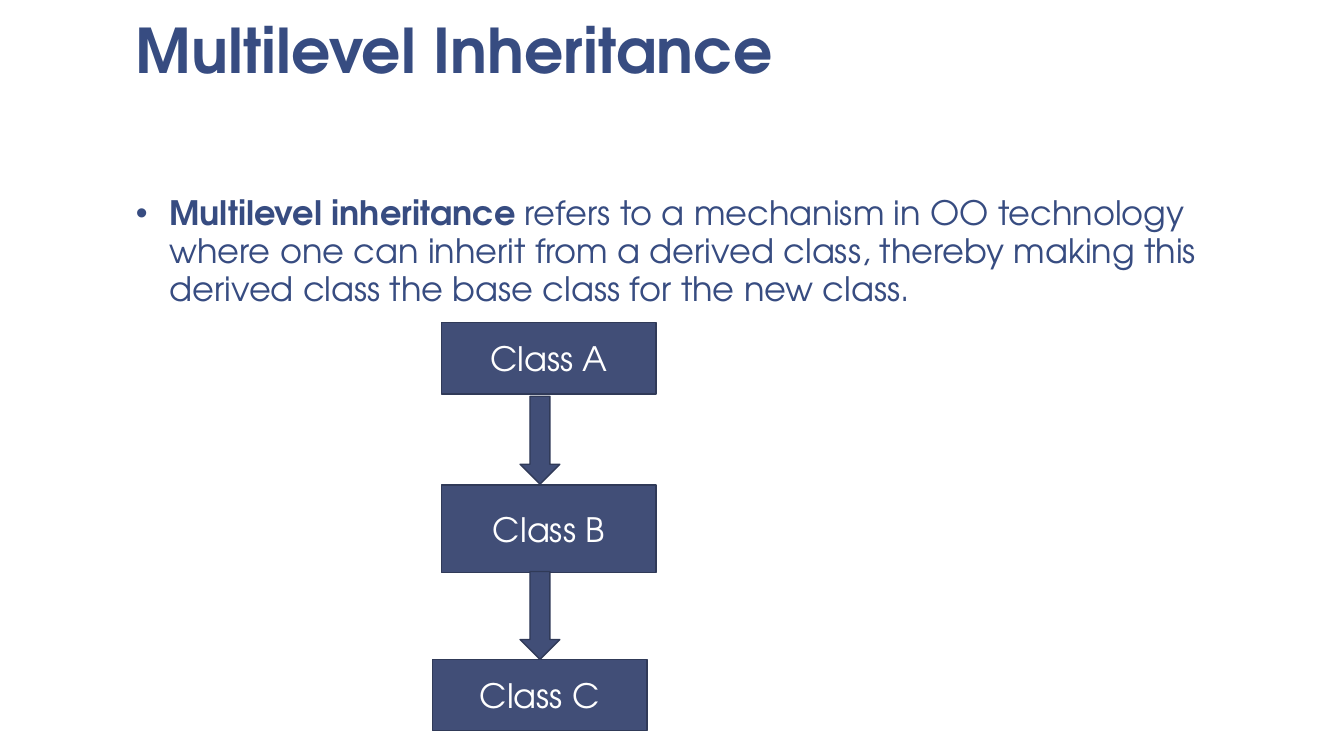
from dataclasses import dataclass

import pptx
import pptx.dml.color
import pptx.enum.shapes
import pptx.enum.text
import pptx.oxml
import pptx.oxml.ns
import pptx.util

Pt = pptx.util.Pt
RGB = pptx.dml.color.RGBColor
KIND = pptx.enum.shapes.MSO_SHAPE
ALIGN = pptx.enum.text.PP_ALIGN
ANCHOR = pptx.enum.text.MSO_ANCHOR

FONT = "TeX Gyre Adventor"
BLUE = RGB(0x37, 0x4C, 0x81)
FILL = RGB(0x41, 0x4E, 0x77)
EDGE = RGB(0x30, 0x3A, 0x58)
WHITE = RGB(0xFF, 0xFF, 0xFF)
INDENT = 24


@dataclass
class Node:
    kind: KIND
    left: float
    top: float
    width: float
    height: float
    label: str = ""


def write(frame, text: str, *, lead: str = "", size: float = 24,
          color: RGB = BLUE, bold: bool = False, align: ALIGN = ALIGN.LEFT,
          anchor: ANCHOR = ANCHOR.TOP, pitch: float = 1,
          bullet: str = "") -> None:
    """Fill a frame with one paragraph: a bold lead, then the text."""
    frame.word_wrap = True
    frame.vertical_anchor = anchor
    para = frame.paragraphs[0]
    if bullet:
        props = para._p.get_or_add_pPr()
        props.set("marL", str(Pt(INDENT)))
        props.set("indent", str(-Pt(INDENT)))
        space = pptx.oxml.ns.nsdecls("a")
        props.append(pptx.oxml.parse_xml(f'<a:buFont {space} typeface="Arial"/>'))
        props.append(pptx.oxml.parse_xml(f'<a:buChar {space} char="{bullet}"/>'))
    para.alignment = align
    para.line_spacing = pitch
    for part, heavy in ((lead, True), (text, bold)):
        if part:
            run = para.add_run()
            run.text = part
            run.font.name = FONT
            run.font.size = Pt(size)
            run.font.bold = heavy
            run.font.color.rgb = color


def add_box(slide, left: float, top: float, width: float, height: float):
    """Add a text box with the wide margins of title and body."""
    box = slide.shapes.add_textbox(Pt(left), Pt(top), Pt(width), Pt(height))
    frame = box.text_frame
    frame.margin_left = frame.margin_right = Pt(9.36)
    frame.margin_top = frame.margin_bottom = Pt(5.04)
    return frame


def draw(slide, node: Node) -> None:
    shape = slide.shapes.add_shape(node.kind, Pt(node.left), Pt(node.top),
                                   Pt(node.width), Pt(node.height))
    shape.shadow.inherit = False
    shape.fill.solid()
    shape.fill.fore_color.rgb = FILL
    shape.line.color.rgb = EDGE
    shape.line.width = Pt(1)
    if node.label:
        write(shape.text_frame, node.label, color=WHITE,
              align=ALIGN.CENTER, anchor=ANCHOR.MIDDLE)


NODES = [
    Node(KIND.RECTANGLE, 315.3, 230.4, 153.4, 51.1, "Class A"),
    Node(KIND.RECTANGLE, 315.3, 346.5, 153.4, 62.6, "Class B"),
    Node(KIND.DOWN_ARROW, 371.5, 283, 28.4, 62.8),
    Node(KIND.DOWN_ARROW, 371.5, 408.2, 28.4, 62.8),
    Node(KIND.RECTANGLE, 308.9, 470.9, 153.4, 51.1, "Class C"),
]


def main() -> None:
    deck = pptx.Presentation()
    deck.slide_width, deck.slide_height = Pt(960), Pt(540)
    slide = deck.slides.add_slide(deck.slide_layouts[6])
    slide.background.fill.solid()
    slide.background.fill.fore_color.rgb = WHITE

    write(add_box(slide, 87.8, 5.8, 800, 60.4), "Multilevel Inheritance",
          size=44, bold=True, anchor=ANCHOR.BOTTOM, pitch=0.85)
    write(add_box(slide, 87.8, 133.9, 800, 352),
          " refers to a mechanism in OO technology where one can inherit "
          "from a derived class, thereby making this derived class the base "
          "class for the new class.",
          lead="Multilevel inheritance", pitch=0.95, bullet="•")
    for node in NODES:
        draw(slide, node)
    deck.save("out.pptx")


if __name__ == "__main__":
    main()
